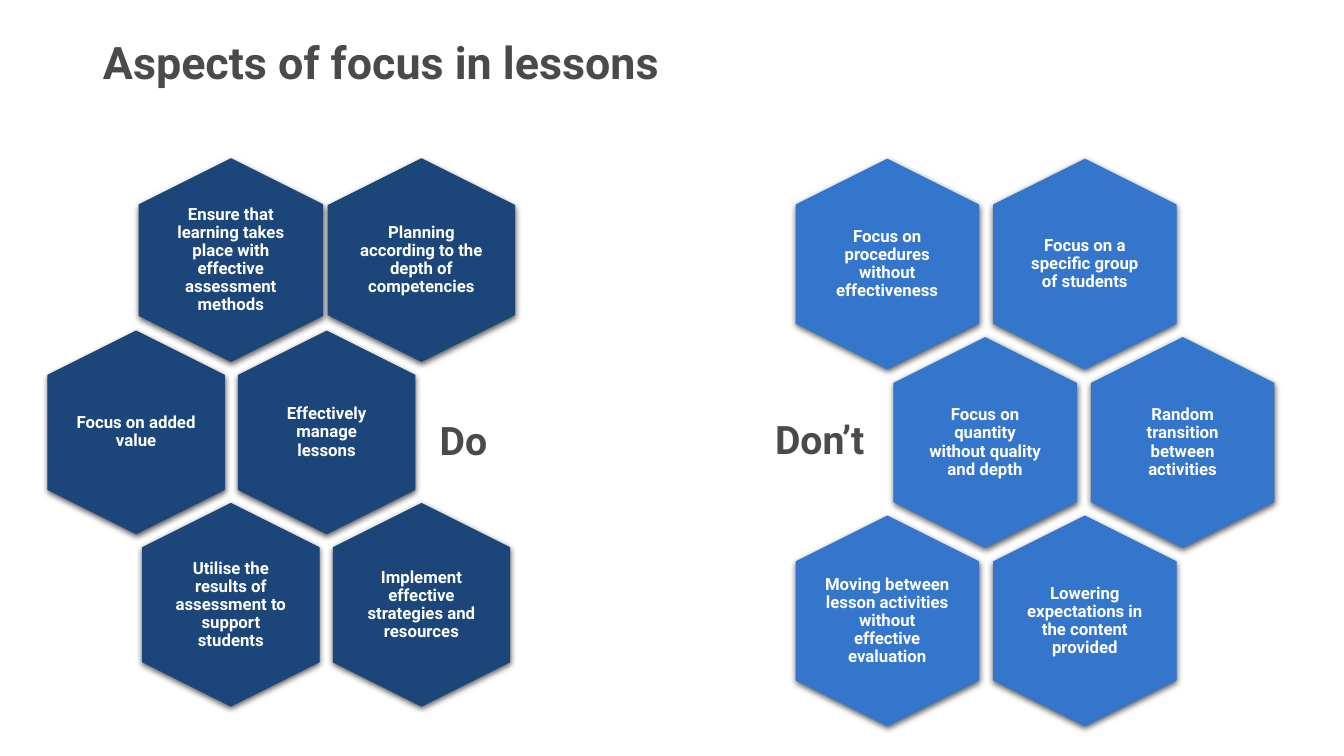
from lxml.etree import SubElement
from pptx import Presentation
from pptx.dml.color import RGBColor
from pptx.enum.shapes import MSO_SHAPE
from pptx.enum.text import MSO_ANCHOR, PP_ALIGN
from pptx.oxml.ns import qn
from pptx.util import Inches, Pt

HUES = {"navy": "1C4679", "blue": "3376CC", "gray": "4A4A4A",
        "white": "FFFFFF", "black": "000000"}

DO = [
    (2.29, 2.58, 1.89, [
        ("Ensure that learning takes place with effective assessment methods", 1.82),
        ("Planning according to the depth of competencies", 1.85)]),
    (3.24, 4.29, -1.89, [
        ("Effectively manage lessons", 1.75),
        ("Focus on added value", 1.75)]),
    (2.29, 6, 1.89, [
        ("Utilise the results of assessment to support students", 1.75),
        ("Implement effective strategies and resources", 1.75)]),
]
DONT = [
    (10.76, 2.62, -1.96, [
        ("Focus on a specific group of students", 1.81),
        ("Focus on procedures without effectiveness", 1.81)]),
    (9.77, 4.39, 1.96, [
        ("Focus on quantity without quality and depth", 1.81),
        ("Random transition between activities", 1.81)]),
    (10.76, 6.16, -1.96, [
        ("Lowering expectations in the content provided", 1.81),
        ("Moving between lesson activities without effective evaluation", 1.81)]),
]


class Deck:
    """Holds the style and the current slide."""

    def __init__(self, font):
        self.font = font
        self.prs = Presentation()
        self.prs.slide_width = Inches(13.33)
        self.prs.slide_height = Inches(7.5)
        self.slide = self.prs.slides.add_slide(self.prs.slide_layouts[5])

    def hue(self, name):
        return RGBColor.from_string(HUES[name])

    def fill_text(self, frame, text, size, hue, align):
        frame.word_wrap = True
        frame.vertical_anchor = MSO_ANCHOR.MIDDLE
        para = frame.paragraphs[0]
        para.text = text
        para.alignment = align
        para.line_spacing = 0.9
        font = para.font
        font.name, font.size, font.bold = self.font, Pt(size), True
        font.color.rgb = self.hue(hue)
        return para

    def title(self, text):
        head = self.slide.shapes.title
        head.left, head.top = Inches(0.92), Inches(0.24)
        head.width, head.height = Inches(11.15), Inches(0.81)
        self.fill_text(head.text_frame, text, 32, "gray", PP_ALIGN.LEFT)

    def label(self, box, text, size, hue, align, inset):
        frame = self.slide.shapes.add_textbox(*map(Inches, box)).text_frame
        frame.margin_left = frame.margin_right = Inches(inset)
        frame.margin_top = frame.margin_bottom = Inches(inset)
        para = self.fill_text(frame, text, size, hue, align)
        para.space_after = Pt(0.35 * size)

    def shade(self, shape):
        shape.shadow.inherit = False
        glow = SubElement(shape.element.spPr.find(qn("a:effectLst")), qn("a:outerShdw"),
                          blurRad=str(Pt(4.5)), dist=str(Pt(1.5)),
                          dir="5400000", algn="ctr", rotWithShape="0")
        tint = SubElement(glow, qn("a:srgbClr"), val=HUES["black"])
        SubElement(tint, qn("a:alpha"), val="63000")

    def hexagon(self, x, y, long, wide, hue):
        shape = self.slide.shapes.add_shape(
            MSO_SHAPE.HEXAGON, Inches(x - long / 2), Inches(y - wide / 2),
            Inches(long), Inches(wide))
        shape.rotation = 90
        shape.fill.solid()
        shape.fill.fore_color.rgb = self.hue(hue)
        shape.line.color.rgb = self.hue(hue)
        shape.line.width = Pt(0.75)
        self.shade(shape)

    def comb(self, rows, long, hue):
        for left, y, step, cells in rows:
            for i, (text, wide) in enumerate(cells):
                x = left + i * step
                self.hexagon(x, y, long, wide, hue)
                w, h = wide * 0.69, long * 0.69
                self.label((x - w / 2, y - h / 2, w, h), text, 12, "white",
                           PP_ALIGN.CENTER, 0 if i else 0.05)


def main():
    deck = Deck("Roboto")
    deck.title("Aspects of focus in lessons")
    deck.comb(DO, 2.01, "navy")
    deck.label((4.24, 3.79, 2.25, 1.21), "Do", 28, "gray", PP_ALIGN.LEFT, 0.12)
    deck.comb(DONT, 2.08, "blue")
    deck.label((6.54, 3.76, 2.25, 1.25), "Don’t ", 28, "gray", PP_ALIGN.RIGHT, 0.12)
    deck.prs.save("out.pptx")


if __name__ == "__main__":
    main()
